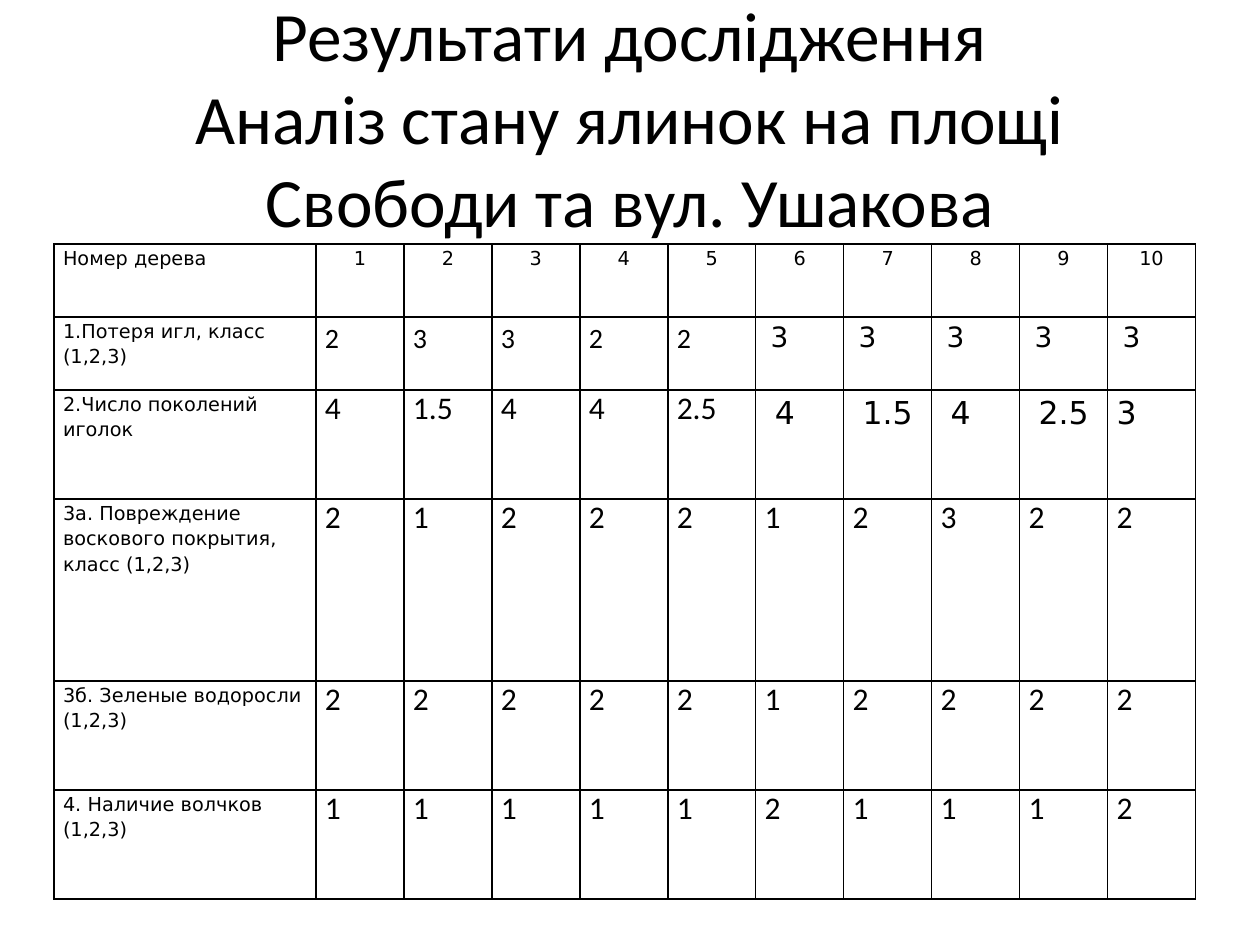
from lxml import etree
from pptx import Presentation
from pptx import util as u
from pptx.dml.color import RGBColor
from pptx.enum import text
from pptx.oxml import ns

PX = 914400 / 126
COLORS = {"ink": "000000", "border": "000000"}
LABEL_FONT, VALUE_FONT = "DejaVu Sans", "Calibri"
INSET = 9


def px(length):
    return u.Emu(round(length * PX))


def add_span(para, words, font, size):
    span = para.add_run()
    span.text = words
    span.font.name = font
    span.font.size = u.Pt(size)
    span.font.bold = False
    span.font.color.rgb = RGBColor.from_string(COLORS["ink"])


deck = Presentation()
deck.slide_width, deck.slide_height = px(1260), px(945)
page = deck.slides.add_slide(deck.slide_layouts[5])

# Title
title = page.shapes.title
title.left, title.top, title.width, title.height = px(63), px(38), px(1134), px(158)
frame = title.text_frame
frame.word_wrap = True
frame.auto_size = text.MSO_AUTO_SIZE.NONE
frame.vertical_anchor = text.MSO_ANCHOR.MIDDLE
para = frame.paragraphs[0]
para.alignment = text.PP_ALIGN.CENTER
add_span(para, "Результати дослідження", VALUE_FONT, 39.6)
para.add_line_break()
add_span(para, "Аналіз стану ялинок на площі Свободи та вул. Ушакова", VALUE_FONT, 39.6)

# Survey data: label, then one value per tree
survey = [
    ("Номер дерева", "1 2 3 4 5 6 7 8 9 10"),
    ("1.Потеря игл, класс (1,2,3)", "2 3 3 2 2 3 3 3 3 3"),
    ("2.Число поколений иголок", "4 1.5 4 4 2.5 4 1.5 4 2.5 3"),
    ("3а. Повреждение воскового покрытия, класс (1,2,3)", "2 1 2 2 2 1 2 3 2 2"),
    ("3б. Зеленые водоросли (1,2,3)", "2 2 2 2 2 1 2 2 2 2"),
    ("4. Наличие волчков (1,2,3)", "1 1 1 1 1 2 1 1 1 2"),
]
column_widths = [262] + [88] * 10
row_heights = [73, 73, 109, 182, 109, 109]

# Table grid
table = page.shapes.add_table(
    len(row_heights), len(column_widths), px(54), px(244),
    px(sum(column_widths)), px(sum(row_heights))).table
table.first_row = table.horz_banding = False
for column, width in zip(table.columns, column_widths):
    column.width = px(width)
for row, height in zip(table.rows, row_heights):
    row.height = px(height)

# Cells
for r, (label, values) in enumerate(survey):
    for c, words in enumerate([label] + values.split()):
        cell = table.cell(r, c)

        # Thin border on every side, no fill
        props = cell._tc.get_or_add_tcPr()
        for side in ("a:lnL", "a:lnR", "a:lnT", "a:lnB"):
            line = etree.SubElement(props, ns.qn(side), w=str(u.Pt(1)))
            fill = etree.SubElement(line, ns.qn("a:solidFill"))
            etree.SubElement(fill, ns.qn("a:srgbClr"), val=COLORS["border"])
        cell.fill.background()

        # Trees 6 to 10 have their own lettering in the first two measured rows
        second_half = r in (1, 2) and c > 5
        font, size, spacing, align, indent = VALUE_FONT, 18, 1.0, text.PP_ALIGN.LEFT, 0
        if c == 0 or r == 0:
            font, size, spacing = LABEL_FONT, 11, 1.15
            align = text.PP_ALIGN.LEFT if c == 0 else text.PP_ALIGN.CENTER
        elif r == 1 or second_half:
            size = 16 if r == 1 else 18
            spacing, align = 1.15, text.PP_ALIGN.JUSTIFY
            if second_half:
                font = LABEL_FONT
                indent = 6 if r == 1 else 10
                if (r, c) == (2, 10):
                    indent = 0

        cell.margin_left, cell.margin_right = px(INSET + indent), px(INSET)
        cell.margin_top = cell.margin_bottom = 0
        cell.vertical_anchor = text.MSO_ANCHOR.TOP
        para = cell.text_frame.paragraphs[0]
        para.alignment = align
        para.line_spacing = spacing
        add_span(para, words, font, size)

deck.save("out.pptx")
